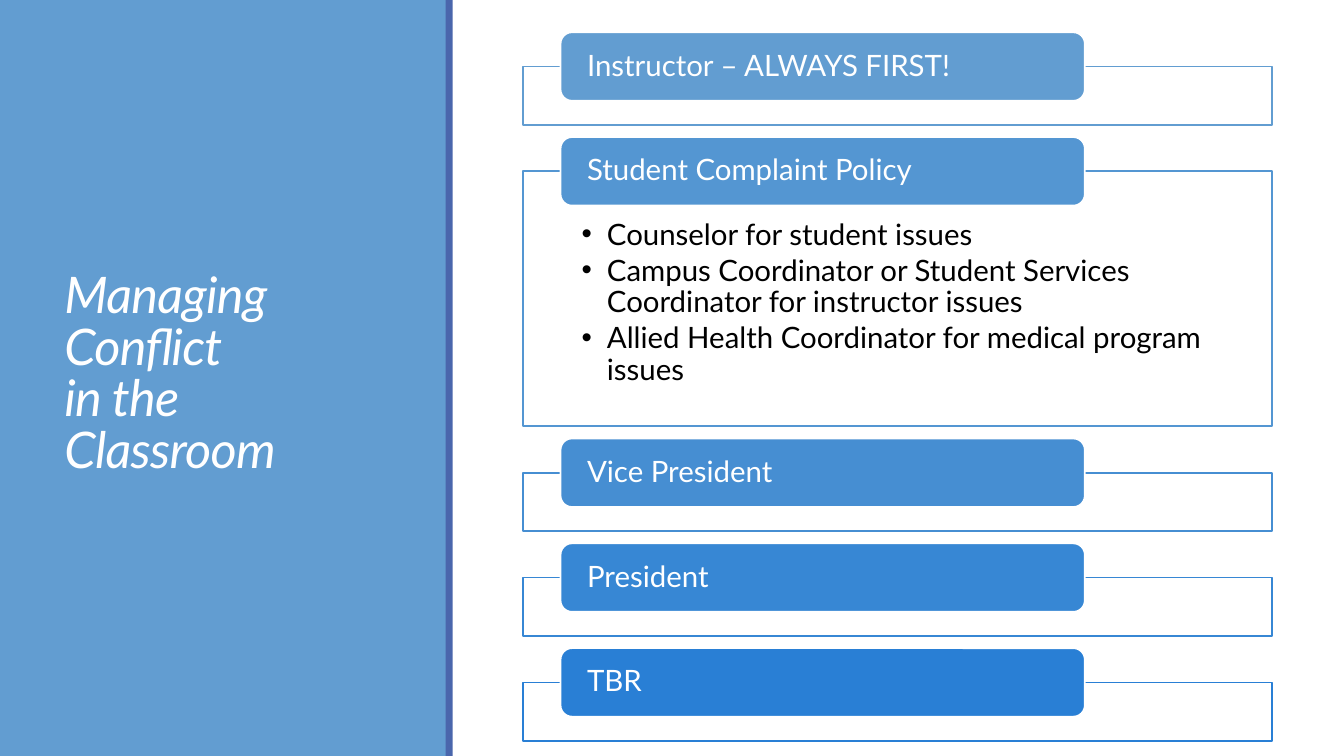
from lxml import etree
from pptx import Presentation, util as u
from pptx.dml.color import RGBColor
from pptx.enum import shapes, text
from pptx.oxml import ns

HUES = {
    "white": "FFFFFF", "black": "000000", "side": "629DD1", "edge": "4A66AC",
    "first": "629DD1", "policy": "5496D2", "vice": "468ED2",
    "chief": "3787D4", "board": "297FD5",
}
STEPS = [
    ("first", "Instructor – ALWAYS FIRST!", 58, []),
    ("policy", "Student Complaint Policy", 253, [
        "Counselor for student issues",
        "Campus Coordinator or Student Services Coordinator for instructor issues",
        "Allied Health Coordinator for medical program issues",
    ]),
    ("vice", "Vice President", 58, []),
    ("chief", "President", 58, []),
    ("board", "TBR", 58, []),
]


def px(n):
    return u.Emu(n * 9144)


def put(item, values):
    for name, value in values.items():
        setattr(item, name, value)


class Deck:
    font = "Lato"

    def __init__(self):
        self.prs = Presentation()
        put(self.prs, {"slide_width": px(1333), "slide_height": px(750)})
        self.slide = self.prs.slides.add_slide(self.prs.slide_layouts[6])

    def hue(self, name):
        return RGBColor.from_string(HUES[name])

    def block(self, box, fill, line=None, kind="RECTANGLE"):
        form = getattr(shapes.MSO_SHAPE, kind)
        shape = self.slide.shapes.add_shape(form, *map(px, box))
        shape.shadow.inherit = False
        shape.fill.solid()
        shape.fill.fore_color.rgb = self.hue(fill)
        if line:
            shape.line.color.rgb = self.hue(line)
            shape.line.width = u.Pt(1.25)
        else:
            shape.line.fill.background()
        return shape

    def words(self, shape, lines, size, hue, pads, anchor="MIDDLE",
              space=0.9, dots=False, slant=False):
        frame = shape.text_frame
        sides = ("margin_left", "margin_top", "margin_right", "margin_bottom")
        put(frame, dict(zip(sides, map(px, pads))))
        put(frame, {"word_wrap": True,
                    "vertical_anchor": getattr(text.MSO_ANCHOR, anchor)})
        frame.text = "\n".join(lines)
        for para in frame.paragraphs:
            put(para, {"alignment": text.PP_ALIGN.LEFT, "line_spacing": space})
            if dots:
                self.dot(para)
            for run in para.runs:
                put(run.font, {"name": self.font, "size": u.Pt(size),
                               "italic": slant})
                run.font.color.rgb = self.hue(hue)
        return frame

    def dot(self, para):
        props = para._p.get_or_add_pPr()
        props.set("marL", str(px(25)))
        props.set("indent", str(-px(25)))
        etree.SubElement(props, ns.qn("a:buFont")).set("typeface", "Arial")
        etree.SubElement(props, ns.qn("a:buChar")).set("char", "•")
        para.space_after = u.Pt(3)

    def title(self, box, label):
        shape = self.slide.shapes.add_textbox(*map(px, box))
        frame = self.words(shape, [label], 36, "white", (10, 5, 10, 5),
                           space=0.85, slant=True)
        for run in frame.paragraphs[0].runs:
            run.font._element.set("spc", "-50")

    def step(self, top, hue, label, high, notes):
        panel = self.block((519, top + 34, 743, high), "white", hue)
        if notes:
            self.words(panel, notes, 21, "black", (58, 48, 58, 16),
                       anchor="TOP", dots=True)
        tab = self.block((556, top, 520, 68), hue, "white", "ROUNDED_RECTANGLE")
        self.words(tab, [label], 21, "white", (23, 0, 23, 0))


def main():
    deck = Deck()
    deck.block((0, 0, 443, 750), "side")
    deck.title((54, 57, 337, 631), "Managing Conflict\vin the\vClassroom")
    deck.block((442, 0, 7, 750), "edge")
    top = 32
    for hue, label, high, notes in STEPS:
        deck.step(top, hue, label, high, notes)
        top += 34 + high + 12
    deck.prs.save("out.pptx")


if __name__ == "__main__":
    main()
